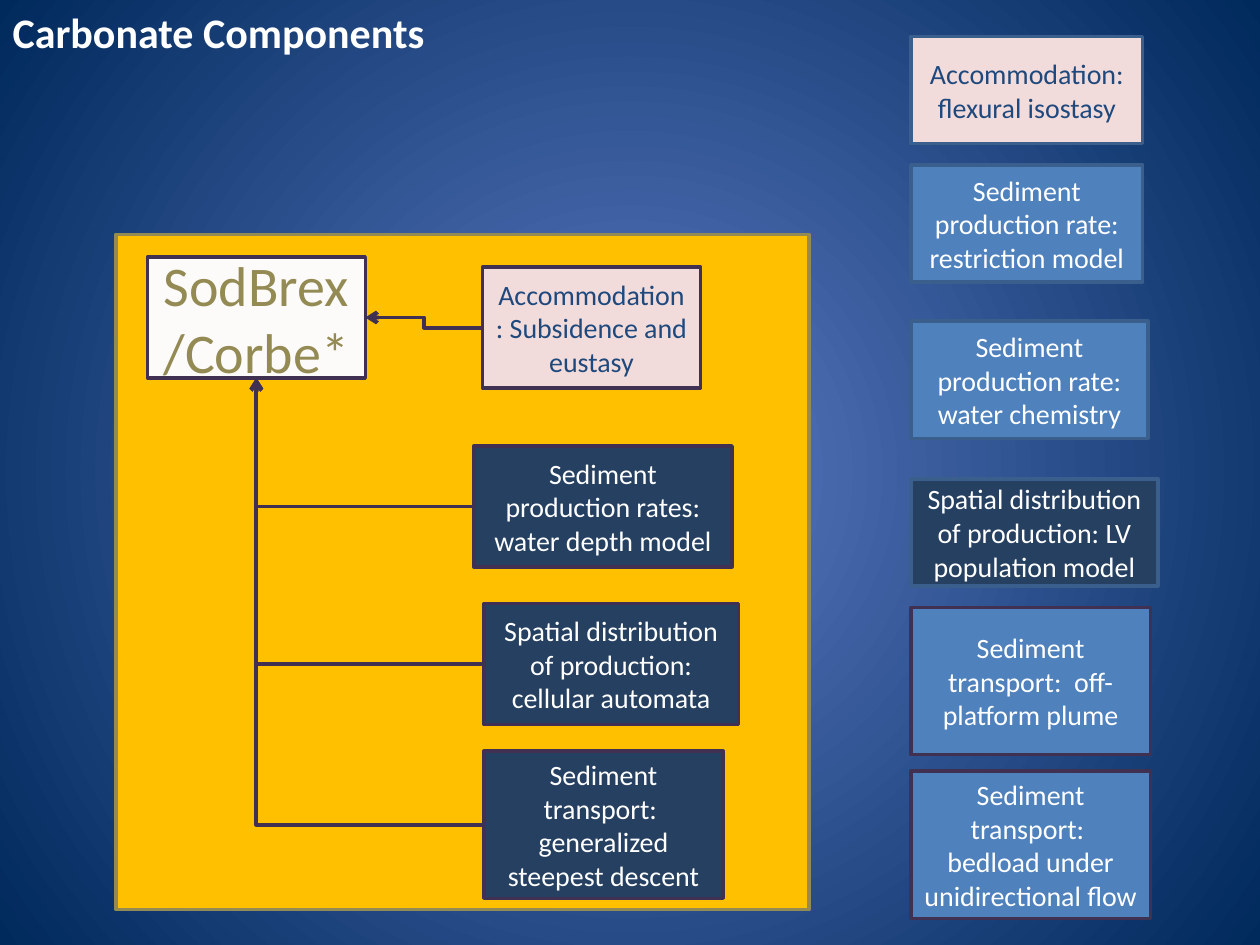
from lxml import etree
from pptx import Presentation
from pptx.dml.color import RGBColor
from pptx.enum.shapes import MSO_CONNECTOR, MSO_SHAPE
from pptx.enum.text import MSO_ANCHOR, MSO_AUTO_SIZE, PP_ALIGN
from pptx.oxml.ns import qn
from pptx.util import Inches, Pt

FONT = "Calibri"
GLOW = RGBColor(0x5E, 0x7C, 0xC5)
NAVY = RGBColor(0x00, 0x29, 0x5C)
GOLD = RGBColor(0xFF, 0xC0, 0x00)
OLIVE = RGBColor(0x94, 0x8A, 0x54)
CREAM = RGBColor(0xFC, 0xFB, 0xF9)
PINK = RGBColor(0xF2, 0xDC, 0xDB)
SLATE = RGBColor(0x25, 0x40, 0x61)
BLUE = RGBColor(0x4F, 0x81, 0xBD)
INK = RGBColor(0x1F, 0x49, 0x7D)
PURPLE = RGBColor(0x40, 0x31, 0x52)
STEEL = RGBColor(0x3A, 0x5F, 0x8C)
WHITE = RGBColor(0xFF, 0xFF, 0xFF)

# Connection sites of a rectangle
LEFT_SIDE, BOTTOM_SIDE, RIGHT_SIDE = 1, 2, 3

# Boxes inside the model: text, left, top, width, height, fill, text colour
ACCOMMODATION = ("Accommodation: Subsidence and eustasy",
                 3.83, 2.12, 1.73, 0.96, PINK, INK)
PROCESSES = [
    ("Sediment production rates: water depth model",
     3.76, 3.54, 2.05, 0.96, SLATE, WHITE),
    ("Spatial distribution of production: cellular automata",
     3.84, 4.79, 2.02, 0.96, SLATE, WHITE),
    ("Sediment transport:  generalized steepest descent",
     3.84, 5.96, 1.9, 1.17, SLATE, WHITE),
]

# Column of further components: text, top, width, height, fill, text colour, line
COLUMN_LEFT = 7.23
COMPONENTS = [
    ("Accommodation: flexural isostasy", 0.29, 1.84, 0.85, PINK, INK, STEEL),
    ("Sediment production rate: restriction model",
     1.31, 1.84, 0.93, BLUE, WHITE, STEEL),
    ("Sediment production rate: water chemistry",
     2.55, 1.88, 0.93, BLUE, WHITE, STEEL),
    ("Spatial distribution of production: LV population model",
     3.8, 1.96, 0.85, SLATE, WHITE, STEEL),
    ("Sediment transport:  off-platform plume",
     4.82, 1.9, 1.17, BLUE, WHITE, PURPLE),
    ("Sediment transport:  bedload under unidirectional flow",
     6.12, 1.9, 1.17, BLUE, WHITE, PURPLE),
]


def set_font(run, size, color, bold=False):
    settings = {"name": FONT, "size": Pt(size), "bold": bold}
    for name, value in settings.items():
        setattr(run.font, name, value)
    run.font.color.rgb = color


def paint_background(slide):
    """Radial gradient, light in the centre."""
    fill = slide.background.fill
    fill.gradient()
    for stop, color, position in zip(fill.gradient_stops, (GLOW, NAVY), (0, 1)):
        stop.color.rgb = color
        stop.position = position
    gradient = slide.background._cSld.find(".//" + qn("a:gradFill"))
    gradient.remove(gradient.find(qn("a:lin")))
    circle = etree.SubElement(gradient, qn("a:path"), path="circle")
    etree.SubElement(circle, qn("a:fillToRect"),
                     {side: "50000" for side in "ltrb"})


def add_title(slide, text):
    title = slide.shapes.title
    bounds = {"left": 0, "top": 0, "width": 9, "height": 0.5}
    for name, inches in bounds.items():
        setattr(title, name, Inches(inches))
    frame = title.text_frame
    frame.text = text
    frame_format = {"word_wrap": True, "vertical_anchor": MSO_ANCHOR.TOP,
                    "auto_size": MSO_AUTO_SIZE.SHAPE_TO_FIT_TEXT}
    for name, value in frame_format.items():
        setattr(frame, name, value)
    paragraph = frame.paragraphs[0]
    paragraph_format = {"alignment": PP_ALIGN.LEFT,
                        "space_before": Pt(6), "space_after": Pt(6)}
    for name, value in paragraph_format.items():
        setattr(paragraph, name, value)
    set_font(paragraph.runs[0], 24, WHITE, bold=True)


def add_box(slide, text, left, top, width, height, fill, color,
            line=PURPLE, size=16):
    box = slide.shapes.add_shape(MSO_SHAPE.RECTANGLE, Inches(left), Inches(top),
                                 Inches(width), Inches(height))
    box.shadow.inherit = False
    box.fill.solid()
    box.fill.fore_color.rgb = fill
    box.line.color.rgb = line
    box.line.width = Pt(2)
    if text:
        frame = box.text_frame
        frame.word_wrap = True
        frame.vertical_anchor = MSO_ANCHOR.MIDDLE
        frame.text = text
        frame.paragraphs[0].alignment = PP_ALIGN.CENTER
        set_font(frame.paragraphs[0].runs[0], size, color)
    return box


def add_elbow_arrow(slide, source, target, target_side, preset):
    """Arrow from the left side of source to one side of target."""
    arrow = slide.shapes.add_connector(MSO_CONNECTOR.ELBOW, 0, 0, 0, 0)
    arrow.begin_connect(source, LEFT_SIDE)
    arrow.end_connect(target, target_side)
    arrow.line.color.rgb = PURPLE
    arrow.line.width = Pt(2.25)
    properties = arrow._element.spPr
    properties.find(qn("a:prstGeom")).set("prst", preset)
    etree.SubElement(properties.find(qn("a:ln")), qn("a:tailEnd"), type="arrow")
    etree.SubElement(properties, qn("a:effectLst"))


def main():
    prs = Presentation()
    prs.slide_width, prs.slide_height = Inches(10), Inches(7.5)
    slide = prs.slides.add_slide(prs.slide_layouts[5])
    paint_background(slide)
    add_title(slide, "Carbonate Components")

    # Model panel with its core and the processes that feed it
    add_box(slide, "", 0.92, 1.86, 5.5, 5.36, GOLD, WHITE, line=OLIVE)
    core = add_box(slide, "SodBrex/Corbe*", 1.17, 2.04, 1.73, 0.96,
                   CREAM, OLIVE, size=32)
    accommodation = add_box(slide, *ACCOMMODATION)
    add_elbow_arrow(slide, accommodation, core, RIGHT_SIDE, "bentConnector3")
    for process in PROCESSES:
        add_elbow_arrow(slide, add_box(slide, *process), core,
                        BOTTOM_SIDE, "bentConnector2")

    # Components outside the model
    for text, *bounds_and_colors in COMPONENTS:
        add_box(slide, text, COLUMN_LEFT, *bounds_and_colors)

    prs.save("out.pptx")


if __name__ == "__main__":
    main()
